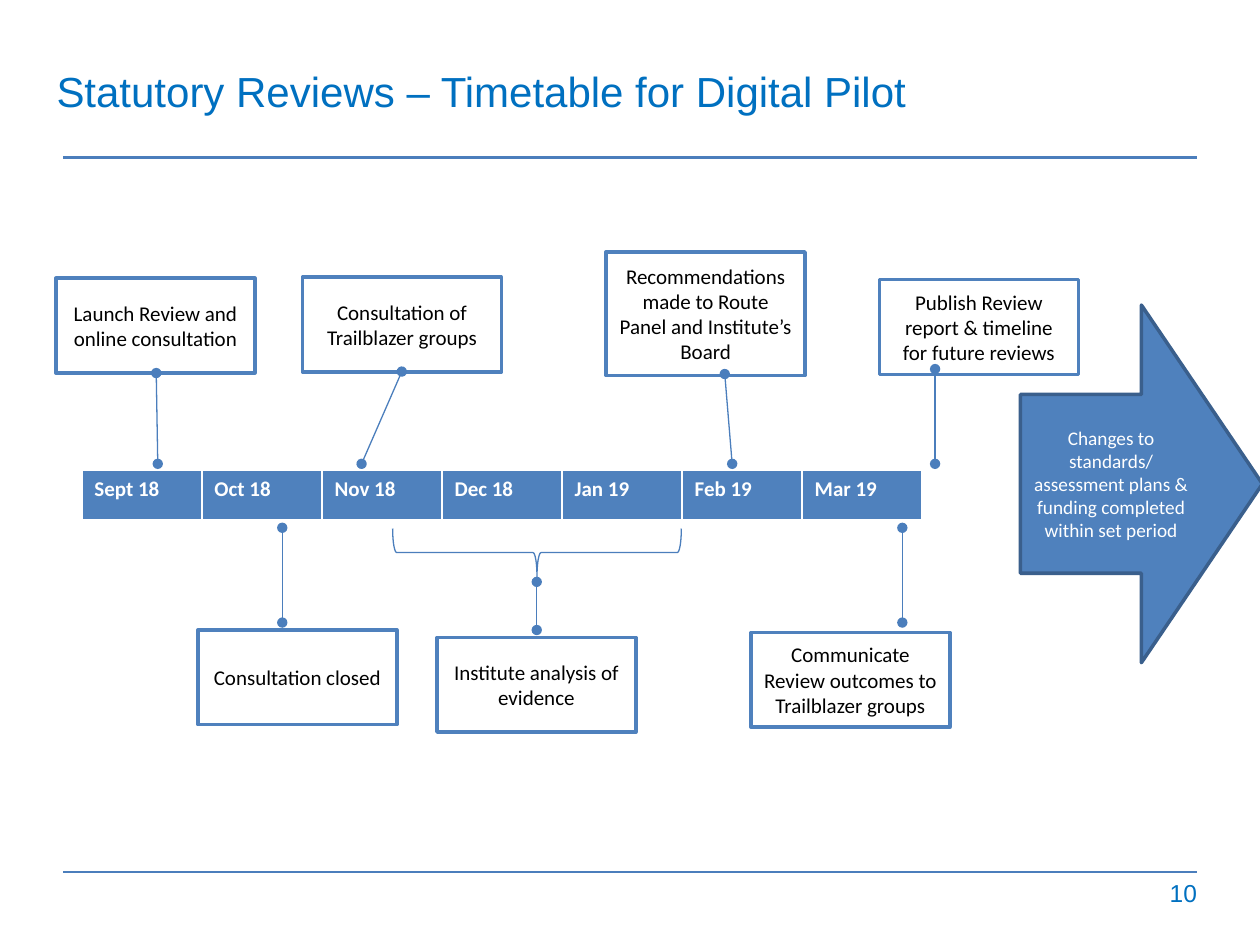
from lxml import etree
from pptx import Presentation
from pptx.dml.color import RGBColor
from pptx.enum.shapes import MSO_CONNECTOR, MSO_SHAPE
from pptx.enum.text import MSO_ANCHOR, PP_ALIGN
from pptx.oxml.ns import qn
from pptx.util import Cm, Pt

LEFT, MID, RIGHT = PP_ALIGN.LEFT, PP_ALIGN.CENTER, PP_ALIGN.RIGHT
TOP, HALF = MSO_ANCHOR.TOP, MSO_ANCHOR.MIDDLE
RECT, ARROW, BRACE = MSO_SHAPE.RECTANGLE, MSO_SHAPE.RIGHT_ARROW, MSO_SHAPE.RIGHT_BRACE
LINE = MSO_CONNECTOR.STRAIGHT

HUES = {"title": "0070C0", "blue": "4F81BD", "rule": "4B7EBC",
        "edge": "3A5F8C", "white": "FFFFFF", "black": "000000"}
MONTHS = ["Sept 18", "Oct 18", "Nov 18", "Dec 18", "Jan 19", "Feb 19", "Mar 19"]
CARD_W, CARD_H = 4.01, 1.91
EVENTS = [
    ("Launch Review and online consultation",
     (1.13, 5.61, CARD_W, CARD_H), (2.02, 1.91, 2.05, 3.74)),
    ("Consultation closed",
     (3.99, 12.7, CARD_W, CARD_H), (1.7, -2.06, 1.7, -0.15)),
    ("Consultation of Trailblazer groups",
     (6.1, 5.59, CARD_W, CARD_H), (2, 1.9, 1.19, 3.76)),
    ("Recommendations made to Route Panel and Institute’s Board",
     (12.22, 5.08, CARD_W, 2.49), (2.39, 2.46, 2.54, 4.27)),
    ("Communicate Review outcomes to Trailblazer groups",
     (15.14, 12.75, CARD_W, CARD_H), (3.05, -2.11, 3.05, -0.2)),
    ("Publish Review report & timeline for future reviews",
     (17.73, 5.64, CARD_W, CARD_H), (1.12, 1.8, 1.12, 3.71)),
    ("Institute analysis of evidence",
     (8.81, 12.85, CARD_W, CARD_H), (2.01, -1.12, 2.01, -0.15)),
]


def hue(name):
    """Return the named colour."""
    return RGBColor.from_string(HUES[name])


def write(frame, text, size=12, font="Calibri", color="black", bold=False,
          align=MID, anchor=HALF, space=None, pads=None):
    """Put one formatted paragraph in a text frame."""
    frame.word_wrap = True
    frame.vertical_anchor = anchor
    if pads:
        (frame.margin_left, frame.margin_top,
         frame.margin_right, frame.margin_bottom) = map(Cm, pads)
    para = frame.paragraphs[0]
    para.text = text
    para.alignment = align
    para.line_spacing = space
    para.font.size, para.font.name, para.font.bold = Pt(size), font, bold
    para.font.color.rgb = hue(color)


def shape(slide, kind, box, fill=None, edge="blue", width=2):
    """Add a flat preset shape."""
    item = slide.shapes.add_shape(kind, *map(Cm, box))
    item.shadow.inherit = False
    if fill:
        item.fill.solid()
        item.fill.fore_color.rgb = hue(fill)
    else:
        item.fill.background()
    item.line.color.rgb = hue(edge)
    item.line.width = Pt(width)
    return item


def link(slide, ends, width=0.75, dots=True):
    """Draw a line, with round ends if asked."""
    item = slide.shapes.add_connector(LINE, *map(Cm, ends))
    item.line.color.rgb = hue("rule")
    item.line.width = Pt(width)
    if dots:
        for tag in ("a:headEnd", "a:tailEnd"):
            etree.SubElement(item.line._get_or_add_ln(), qn(tag), type="oval")
    etree.SubElement(item._element.spPr, qn("a:effectLst"))


def frame(slide, box, title, page):
    """Set the title, the two rules and the page number."""
    x, y, w, h = box
    for level in (y, y + h):
        link(slide, (x, level, x + w, level), 1.5, False)
    head = slide.shapes.add_textbox(Cm(x - 0.13), Cm(y - 2.62), Cm(21.46), Cm(2.13))
    write(head.text_frame, title, size=24, font="Arial", color="title",
          align=LEFT, anchor=TOP, space=0.9, pads=(0, 0.88, 0, 0))
    foot = slide.shapes.add_textbox(Cm(x + w - 5.84), Cm(y + h + 0.13), Cm(5.84), Cm(0.97))
    write(foot.text_frame, page, size=14, font="Arial", color="title",
          align=RIGHT, anchor=TOP, pads=(0, 0, 0, 0))


def event(slide, box, text, ends):
    """Add an event card and its link to the timeline."""
    card = shape(slide, RECT, box, "white")
    write(card.text_frame, text)
    x, y = box[:2]
    x1, y1, x2, y2 = ends
    link(slide, (x + x1, y + y1, x + x2, y + y2))


def border(cell):
    """Give a cell white borders, the lowest one thick."""
    props = cell._tc.get_or_add_tcPr()
    for spot, (side, width) in enumerate(zip("LRTB", (1, 1, 1, 3))):
        edge = etree.Element(qn("a:ln" + side), w=str(Pt(width)))
        fill = etree.SubElement(edge, qn("a:solidFill"))
        etree.SubElement(fill, qn("a:srgbClr"), val=HUES["white"])
        props.insert(spot, edge)


def timeline(slide, box):
    """Lay out the months in a one-row table with a brace below."""
    x, y, w, h = box
    table = slide.shapes.add_table(1, len(MONTHS), *map(Cm, box)).table
    table.first_row = table.horz_banding = False
    table.rows[0].height = Cm(h)
    for col, month in enumerate(MONTHS):
        table.columns[col].width = Cm(w / len(MONTHS))
        cell = table.cell(0, col)
        cell.fill.solid()
        cell.fill.fore_color.rgb = hue("blue")
        border(cell)
        write(cell.text_frame, month, color="white", bold=True, align=LEFT, anchor=TOP)
    brace = shape(slide, BRACE, (x + 8.69, y - 1.24, 0.97, 5.82), edge="rule", width=0.75)
    brace.rotation = 90


def result(slide, box):
    """Add the closing arrow."""
    arrow = shape(slide, ARROW, box, "blue", "edge")
    write(arrow.text_frame, "Changes to standards/ assessment plans & "
          "funding completed within set period", size=11, color="white")


def main():
    """Build and save the slide."""
    deck = Presentation()
    deck.slide_width, deck.slide_height = Cm(25.4), Cm(19.05)
    slide = deck.slides.add_slide(deck.slide_layouts[6])
    frame(slide, (1.27, 3.18, 22.86, 14.4),
          "Statutory Reviews – Timetable for Digital Pilot", "10")
    timeline(slide, (1.65, 9.47, 16.94, 1.04))
    result(slide, (20.57, 6.15, 4.88, 7.21))
    for text, box, ends in EVENTS:
        event(slide, box, text, ends)
    deck.save("out.pptx")


if __name__ == "__main__":
    main()
